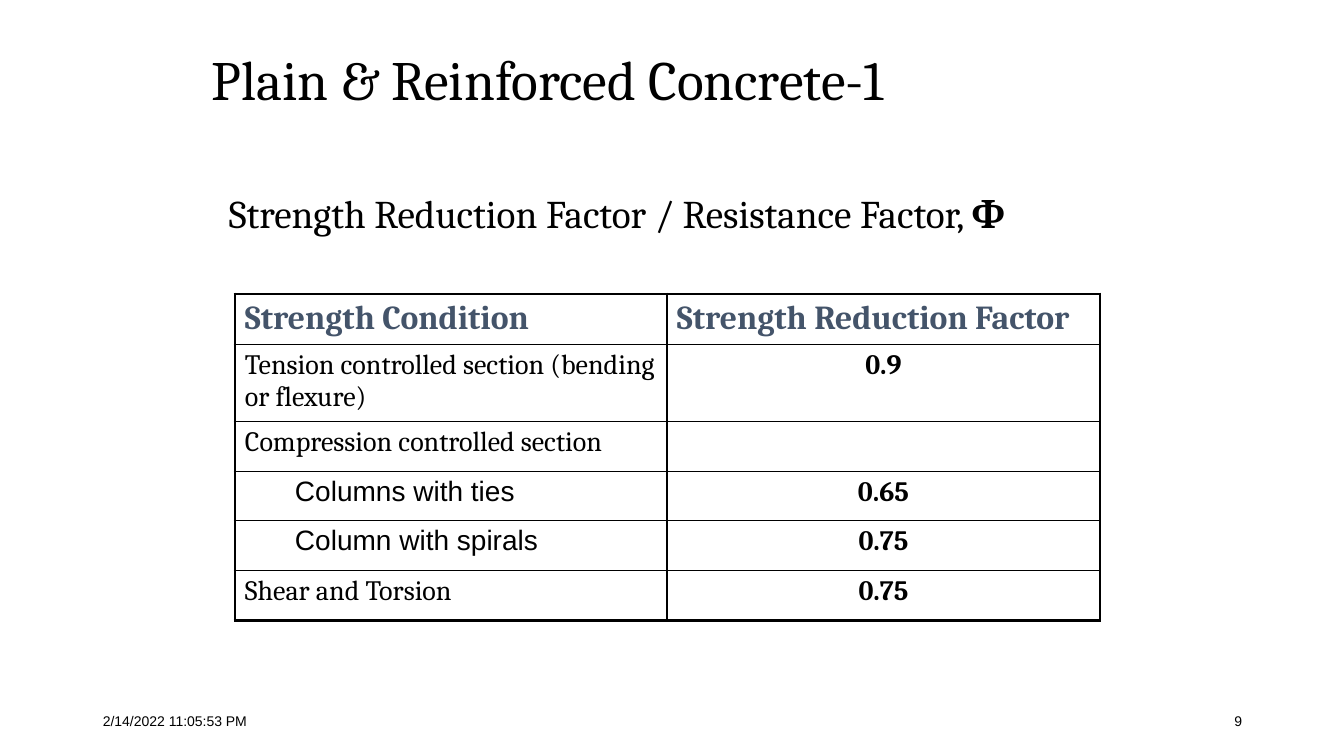
from lxml import etree
from pptx import Presentation, util as u
from pptx.dml.color import RGBColor
from pptx.enum import text
from pptx.oxml.ns import qn

BLACK = RGBColor(0x00, 0x00, 0x00)
SLATE = RGBColor(0x44, 0x54, 0x6A)
SERIF, SANS = "Cambria", "Arial"
LEFT, CENTER, RIGHT = (text.PP_ALIGN.LEFT, text.PP_ALIGN.CENTER,
                       text.PP_ALIGN.RIGHT)
THIN, THICK = u.Pt(1), u.Pt(2.25)


def px(n):
    return u.Inches(n / 100.8)


class SlideBuilder:
    def __init__(self, slide):
        self.slide = slide

    def style(self, paragraph, size, font=SERIF, color=BLACK, bold=False,
              align=LEFT):
        paragraph.alignment = align
        paragraph.font.name = font
        paragraph.font.size = u.Pt(size)
        paragraph.font.bold = bold
        paragraph.font.color.rgb = color

    def textbox(self, box, content, size, font=SERIF, align=LEFT,
                anchor=text.MSO_ANCHOR.MIDDLE, spacing=1.0):
        frame = self.slide.shapes.add_textbox(*map(px, box)).text_frame
        frame.word_wrap = True
        frame.vertical_anchor = anchor
        paragraph = frame.paragraphs[0]
        paragraph.text = content
        paragraph.line_spacing = spacing
        self.style(paragraph, size, font, align=align)
        return paragraph

    def table(self, left, top, col_widths, row_heights):
        table = self.slide.shapes.add_table(
            len(row_heights), len(col_widths), px(left), px(top),
            px(sum(col_widths)), px(sum(row_heights))).table
        table.first_row = table.horz_banding = False
        for column, width in zip(table.columns, col_widths):
            column.width = px(width)
        for row, height in zip(table.rows, row_heights):
            row.height = px(height)
        return table

    def cell(self, cell, content, size, indent=0, **style):
        cell.margin_left = cell.margin_right = px(10)
        cell.margin_top = cell.margin_bottom = px(5)
        paragraph = cell.text_frame.paragraphs[0]
        paragraph.text = content
        self.style(paragraph, size, **style)
        if indent:
            paragraph._p.get_or_add_pPr().set("marL", str(px(indent)))

    def borders(self, cell, widths):
        """Draw black edges; widths maps lnL, lnR, lnT and lnB to EMU."""
        properties = cell._tc.get_or_add_tcPr()
        for edge, width in widths.items():
            line = etree.SubElement(properties, qn(f"a:{edge}"), w=str(width))
            fill = etree.SubElement(line, qn("a:solidFill"))
            etree.SubElement(fill, qn("a:srgbClr"), val=str(BLACK))
        cell.fill.background()


def main():
    prs = Presentation()
    prs.slide_width, prs.slide_height = px(1344), px(756)
    page = SlideBuilder(prs.slides.add_slide(prs.slide_layouts[6]))

    page.textbox((93, 701, 302, 40), "2/14/2022 11:05:53 PM", 10, SANS)
    page.textbox((950, 701, 302, 40), "9", 10, SANS, RIGHT)
    page.textbox((202, 42, 832, 81), "Plain & Reinforced Concrete-1", 39.6,
                 spacing=0.9)
    subtitle = page.textbox(
        (219, 190, 899, 80), "Strength Reduction Factor / Resistance Factor, ",
        28, anchor=text.MSO_ANCHOR.TOP, spacing=0.9)
    phi = subtitle.add_run()
    phi.text = "Φ"
    phi.font.bold = True

    # Condition, indent, condition font, factor
    conditions = [
        ("Tension controlled section (bending or flexure)", 0, SERIF, "0.9"),
        ("Compression controlled section", 0, SERIF, ""),
        ("Columns with ties", 50, SANS, "0.65"),
        ("Column with spirals", 50, SANS, "0.75"),
        ("Shear and Torsion", 0, SERIF, "0.75"),
    ]
    factors = page.table(235, 294, [432, 433], [50, 77, 50, 49, 50, 50])
    for col, heading in enumerate(["Strength Condition",
                                   "Strength Reduction Factor"]):
        page.cell(factors.cell(0, col), heading, 24, color=SLATE, bold=True)
    for row, (condition, indent, font, factor) in enumerate(conditions, 1):
        page.cell(factors.cell(row, 0), condition, 20, indent, font=font)
        page.cell(factors.cell(row, 1), factor, 20, bold=True, align=CENTER)

    last = len(conditions)
    for row in range(last + 1):
        for col in range(2):
            page.borders(factors.cell(row, col), {
                "lnL": THICK if col == 0 else THIN,
                "lnR": THICK if col == 1 else THIN,
                "lnT": THICK if row == 0 else THIN,
                "lnB": THICK if row == last else THIN,
            })

    prs.save("out.pptx")


if __name__ == "__main__":
    main()
